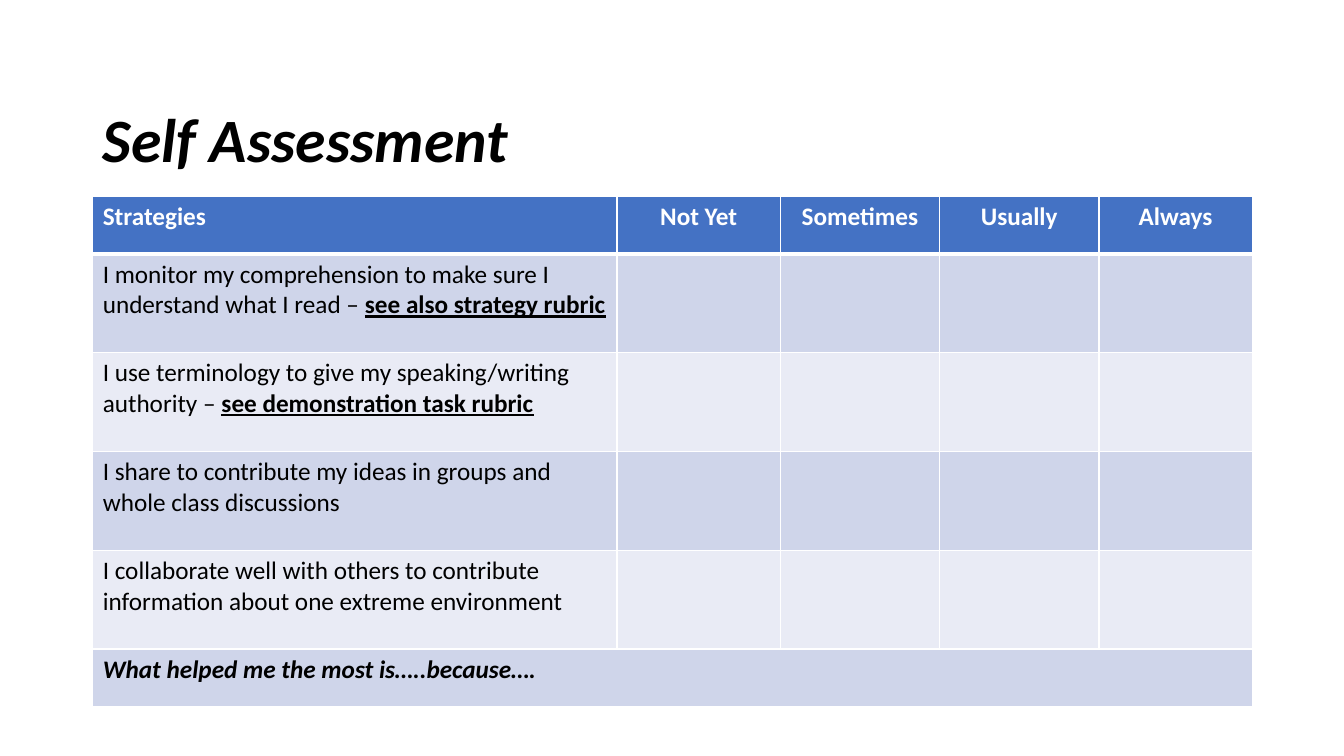
from lxml.etree import SubElement
from pptx import Presentation
from pptx.dml.color import RGBColor
from pptx.enum.text import MSO_ANCHOR as Anchor, PP_ALIGN as Align
from pptx.oxml.ns import qn
from pptx.util import Inches, Pt

WIDTH, HEIGHT = Inches(13.33), Inches(7.5)
MARGIN = 0.069
COLUMNS = [5.2, 1.62, 1.58, 1.58, 1.52]
EDGE_ROW, STRATEGY_ROW = 0.57, 0.98
BLACK, WHITE, HEADER = "000000", "FFFFFF", "4472C4"
BANDS = ["CFD5EA", "E9EBF5"]
RATINGS = ["Not Yet", "Sometimes", "Usually", "Always"]
STRATEGIES = [
    ("I monitor my comprehension to make sure I understand what I read – ",
     "see also strategy rubric"),
    ("I use terminology to give my speaking/writing authority – ",
     "see demonstration task rubric"),
    ("I share to contribute my ideas in groups and whole class discussions", ""),
    ("I collaborate well with others to contribute information about one "
     "extreme environment", ""),
]
REFLECTION = "What helped me the most is…..because…."


def color(value):
    return RGBColor.from_string(value)


def add_words(paragraph, words, ink=BLACK, size=18, **style):
    run = paragraph.add_run()
    run.text = words
    run.font.color.rgb = color(ink)
    for key, value in {"name": "Calibri", "size": Pt(size), **style}.items():
        setattr(run.font, key, value)


def add_title(slide, words):
    frame = slide.shapes.add_textbox(
        int(WIDTH * MARGIN), int(HEIGHT * 0.092),
        int(WIDTH * (1 - 2 * MARGIN)), int(HEIGHT * 0.193)).text_frame
    for key, value in {"word_wrap": True, "vertical_anchor": Anchor.MIDDLE}.items():
        setattr(frame, key, value)
    paragraph = frame.paragraphs[0]
    paragraph.line_spacing = 0.9
    add_words(paragraph, words, size=44, bold=True, italic=True)


def paint_cell(cell, fill, bottom=1, top=1):
    properties = cell._tc.get_or_add_tcPr()
    for side, weight in {"L": 1, "R": 1, "T": top, "B": bottom}.items():
        line = SubElement(properties, qn(f"a:ln{side}"), w=str(Pt(weight)))
        ink = SubElement(line, qn("a:solidFill"))
        SubElement(ink, qn("a:srgbClr"), val=WHITE)
    cell.fill.solid()
    cell.fill.fore_color.rgb = color(fill)


def add_rubric(slide):
    heights = [EDGE_ROW, *[STRATEGY_ROW] * len(STRATEGIES), EDGE_ROW]
    rubric = slide.shapes.add_table(
        len(heights), len(COLUMNS), int(WIDTH * MARGIN), int(HEIGHT * 0.26),
        Inches(sum(COLUMNS)), Inches(sum(heights))).table
    for column, width in zip(rubric.columns, COLUMNS):
        column.width = Inches(width)
    for index, (row, height) in enumerate(zip(rubric.rows, heights)):
        row.height = Inches(height)
        for cell in row.cells:
            paint_cell(cell, BANDS[(index - 1) % 2] if index else HEADER,
                       bottom=1 if index else 3, top=3 if index == 1 else 1)
    return rubric


def fill_rubric(rubric):
    for index, heading in enumerate(["Strategies", *RATINGS]):
        paragraph = rubric.cell(0, index).text_frame.paragraphs[0]
        paragraph.alignment = Align.CENTER if index else Align.LEFT
        add_words(paragraph, heading, WHITE, bold=True)
    for index, (strategy, reference) in enumerate(STRATEGIES, 1):
        paragraph = rubric.cell(index, 0).text_frame.paragraphs[0]
        add_words(paragraph, strategy, bold=False)
        if reference:
            add_words(paragraph, reference, bold=True, underline=True)
    last = len(STRATEGIES) + 1
    reflection = rubric.cell(last, 0)
    reflection.merge(rubric.cell(last, len(COLUMNS) - 1))
    add_words(reflection.text_frame.paragraphs[0], REFLECTION, bold=True, italic=True)


def main():
    deck = Presentation()
    deck.slide_width, deck.slide_height = WIDTH, HEIGHT
    slide = deck.slides.add_slide(deck.slide_layouts[6])
    add_title(slide, "Self Assessment")
    fill_rubric(add_rubric(slide))
    deck.save("out.pptx")


if __name__ == "__main__":
    main()
